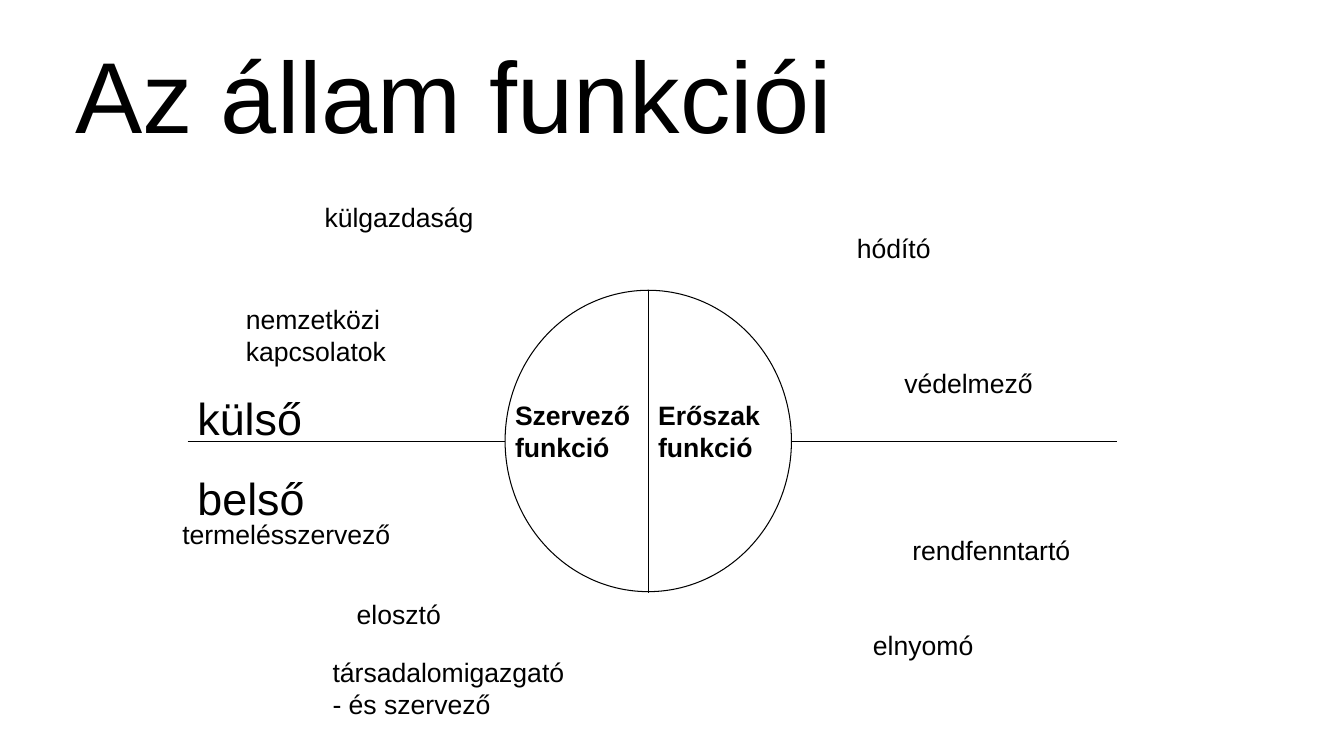
from lxml import etree
from pptx import Presentation, util as u
from pptx.dml.color import RGBColor
from pptx.enum import shapes, text
from pptx.oxml import ns

COLORS = {"ink": "000000", "paper": "FFFFFF"}


class StateFunctionsSlide:
    """Draws the elements of one slide in a shared style."""

    def __init__(self, presentation):
        self.slide = presentation.slides.add_slide(presentation.slide_layouts[5])
        self.font = {"name": "Arial", "bold": False}
        self.line_width = u.Pt(0.75)

    def color(self, name):
        return RGBColor.from_string(COLORS[name])

    def apply(self, target, values):
        for name, value in values.items():
            setattr(target, name, value)

    def place(self, shape, left, top, width, height):
        sides = {"left": left, "top": top, "width": width, "height": height}
        self.apply(shape, {name: u.Inches(side) for name, side in sides.items()})

    def add_words(self, frame, words, size, bold=False, align=text.PP_ALIGN.LEFT):
        paragraph = frame.paragraphs[0]
        paragraph.alignment = align
        run = paragraph.add_run()
        run.text = words
        self.apply(run.font, {**self.font, "size": u.Pt(size), "bold": bold})
        run.font.color.rgb = self.color("ink")

    def outline(self, shape):
        shape.line.color.rgb = self.color("ink")
        shape.line.width = self.line_width

    def title(self, words, box):
        shape = self.slide.shapes.title
        self.place(shape, *box)
        frame = shape.text_frame
        self.apply(frame, {
            "margin_left": u.Inches(0.13), "margin_right": u.Inches(0.13),
            "margin_top": u.Inches(0.07), "margin_bottom": u.Inches(0.07),
            "vertical_anchor": text.MSO_ANCHOR.MIDDLE,
            "auto_size": text.MSO_AUTO_SIZE.NONE, "word_wrap": True,
        })
        self.add_words(frame, words, 72, align=text.PP_ALIGN.CENTER)

    def circle(self, box):
        shape = self.slide.shapes.add_shape(
            shapes.MSO_SHAPE.OVAL, *(u.Inches(side) for side in box))
        shape.shadow.inherit = False
        shape.fill.solid()
        shape.fill.fore_color.rgb = self.color("paper")
        self.outline(shape)

    def line(self, *ends):
        connector = self.slide.shapes.add_connector(
            shapes.MSO_CONNECTOR.STRAIGHT, *(u.Inches(end) for end in ends))
        self.outline(connector)
        etree.SubElement(connector._element.spPr, ns.qn("a:effectLst"))

    def label(self, words, box, size=19, bold=False, wrap=True):
        shape = self.slide.shapes.add_textbox(*(u.Inches(side) for side in box))
        self.apply(shape.text_frame, {
            "word_wrap": wrap,
            "auto_size": text.MSO_AUTO_SIZE.SHAPE_TO_FIT_TEXT,
        })
        self.add_words(shape.text_frame, words, size, bold)


def main():
    presentation = Presentation()
    presentation.slide_width = u.Inches(13.33)
    presentation.slide_height = u.Inches(7.5)
    page = StateFunctionsSlide(presentation)

    page.title("Az állam funkciói", (0, 0.3, 9, 1.25))
    page.circle((5.01, 2.88, 2.84, 2.99))
    page.line(6.43, 2.88, 6.43, 5.88)
    for start, end in ((1.86, 5.01), (7.85, 11.08)):
        page.line(start, 4.38, end, 4.38)

    page.label("Szervező funkció", (5.01, 3.91, 1.42, 0.74), bold=True)
    page.label("Erőszakfunkció", (6.43, 3.91, 1.26, 0.74), bold=True)
    page.label("külső", (1.86, 3.83, 1.34, 0.64), size=32)
    page.label("belső", (1.86, 4.62, 1.58, 0.64), size=32)

    one_line, two_lines = 0.42, 0.74
    functions = (
        ("rendfenntartó", 8.95, 5.25, 2.28, one_line),
        ("hódító", 8.4, 2.25, 1.89, one_line),
        ("védelmező", 8.87, 3.59, 1.65, one_line),
        ("termelésszervező", 1.71, 5.09, 2.44, one_line),
        ("elosztó", 3.44, 5.88, 1.1, one_line),
        ("társadalomigazgató- és szervező", 3.2, 6.46, 2.52, two_lines),
        ("nemzetközi kapcsolatok", 2.34, 2.96, 1.89, two_lines),
        ("külgazdaság", 3.12, 1.94, 1.81, one_line),
    )
    for words, *box in functions:
        page.label(words, box)
    page.label("elnyomó", (8.56, 6.19, 1.21, one_line), wrap=False)

    presentation.save("out.pptx")


if __name__ == "__main__":
    main()
